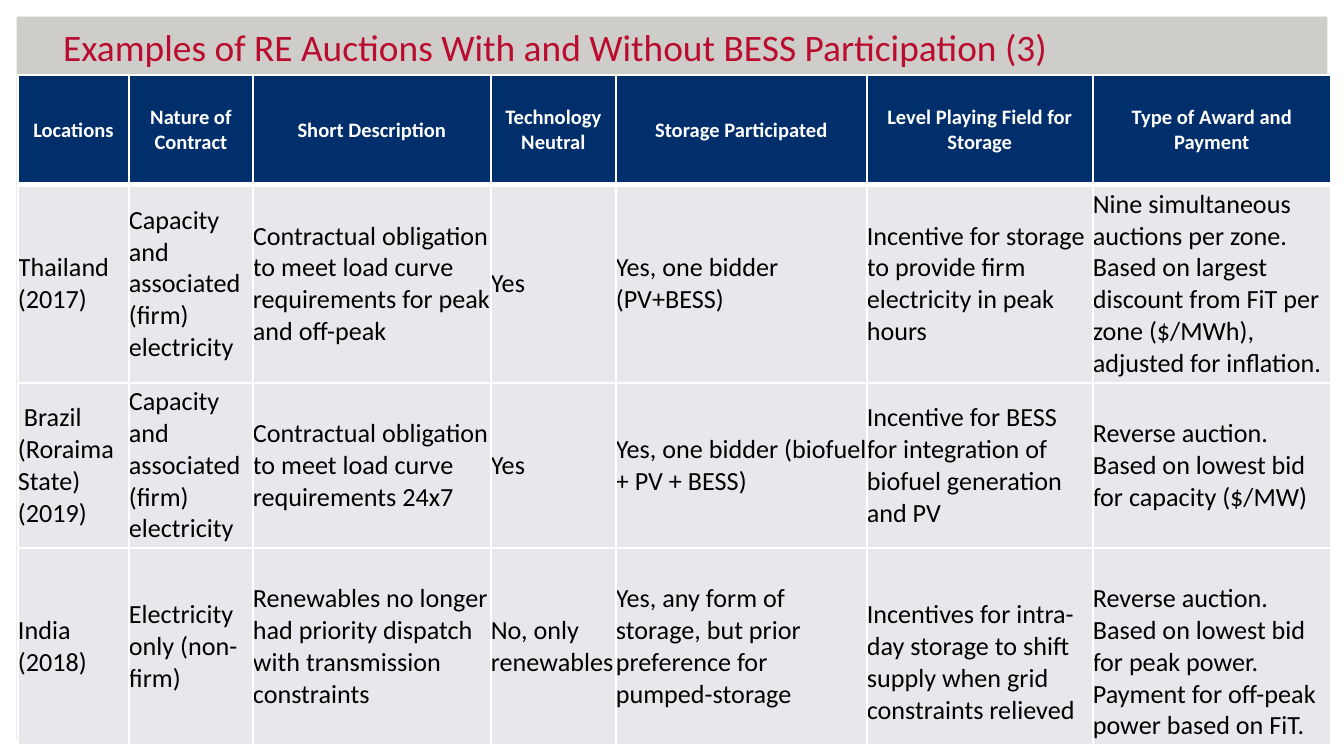
import lxml.etree
import pptx
import pptx.dml.color
import pptx.enum.shapes
import pptx.enum.text
import pptx.oxml.ns
import pptx.util

SCALE = 914400 / 134.4  # EMU in one px
COLORS = {
    "backdrop": "CFCDC9",
    "white": "FFFFFF",
    "title": "BA0C2F",
    "header": "002F6C",
    "body": "E7E8EB",
    "text": "000000",
}
ALIGN = pptx.enum.text.PP_ALIGN
ANCHOR = pptx.enum.text.MSO_ANCHOR


def px(length):
    return pptx.util.Emu(round(length * SCALE))


def write(frame, text, color, align, font_format):
    para = frame.paragraphs[0]
    para.alignment = align
    span = para.add_run()
    span.text = text
    span.font.color.rgb = pptx.dml.color.RGBColor.from_string(COLORS[color])
    for name, value in font_format.items():
        setattr(span.font, name, value)


deck = pptx.Presentation()
deck.slide_width, deck.slide_height = px(1344), px(756)
page = deck.slides.add_slide(deck.slide_layouts[6])

# Backdrop with a white frame
page.background.fill.solid()
page.background.fill.fore_color.rgb = pptx.dml.color.RGBColor.from_string(COLORS["backdrop"])
border = page.shapes.add_shape(
    pptx.enum.shapes.MSO_SHAPE.FRAME, 0, 0, deck.slide_width, deck.slide_height)
border.adjustments[0] = 0.022
border.shadow.inherit = False
border.fill.solid()
border.fill.fore_color.rgb = pptx.dml.color.RGBColor.from_string(COLORS["white"])
border.line.fill.background()

# Table contents
ROWS = [
    ["Locations", "Nature of Contract", "Short Description", "Technology Neutral",
     "Storage Participated", "Level Playing Field for Storage", "Type of Award and Payment"],
    ["Thailand (2017)", "Capacity and associated (firm) electricity",
     "Contractual obligation to meet load curve requirements for peak and off-peak",
     "Yes", "Yes, one bidder (PV+BESS)",
     "Incentive for storage to provide firm electricity in peak hours",
     "Nine simultaneous auctions per zone. Based on largest discount from FiT per zone "
     "($/MWh), adjusted for inflation."],
    [" Brazil (Roraima State) (2019)", "Capacity and associated (firm) electricity",
     "Contractual obligation to meet load curve requirements 24x7",
     "Yes", "Yes, one bidder (biofuel + PV + BESS)",
     "Incentive for BESS for integration of biofuel generation and PV",
     "Reverse auction. Based on lowest bid for capacity ($/MW)"],
    ["India (2018)", "Electricity only (non-firm)",
     "Renewables no longer had priority dispatch with transmission constraints",
     "No, only renewables",
     "Yes, any form of storage, but prior preference for pumped-storage",
     "Incentives for intra-day storage to shift supply when grid constraints relieved",
     "Reverse auction. Based on lowest bid for peak power. Payment for off-peak power "
     "based on FiT."],
]
COLUMN_WIDTHS = [111, 124, 238, 125, 251, 226, 238]
ROW_HEIGHTS = [110, 198, 165, 197]
LOWERED_CELLS = {(3, 5), (3, 6)}  # text sits one line lower
HEADER_FONT = {"name": "Calibri", "size": pptx.util.Pt(11), "bold": True}
BODY_FONT = {"name": "Calibri", "size": pptx.util.Pt(14), "bold": False}

# Table grid
table = page.shapes.add_table(
    len(ROWS), len(COLUMN_WIDTHS), px(18), px(75),
    px(sum(COLUMN_WIDTHS)), px(sum(ROW_HEIGHTS))).table
table.first_row = True
table.horz_banding = False
for column, width in zip(table.columns, COLUMN_WIDTHS):
    column.width = px(width)
for row, height in zip(table.rows, ROW_HEIGHTS):
    row.height = px(height)

# Table cells
for r, texts in enumerate(ROWS):
    for c, text in enumerate(texts):
        cell = table.cell(r, c)
        cell_format = {
            "margin_left": 0,
            "margin_right": 0,
            "margin_top": px(32) if (r, c) in LOWERED_CELLS else 0,
            "margin_bottom": 0,
            "vertical_anchor": ANCHOR.MIDDLE,
        }
        for name, value in cell_format.items():
            setattr(cell, name, value)

        # White borders, thicker below the header
        properties = cell._tc.get_or_add_tcPr()
        for side in "LRTB":
            thick = (r, side) in ((0, "B"), (1, "T"))
            line = lxml.etree.SubElement(
                properties, pptx.oxml.ns.qn(f"a:ln{side}"),
                w=str(pptx.util.Pt(3 if thick else 1)))
            fill = lxml.etree.SubElement(line, pptx.oxml.ns.qn("a:solidFill"))
            lxml.etree.SubElement(fill, pptx.oxml.ns.qn("a:srgbClr"), val=COLORS["white"])

        cell.fill.solid()
        cell.fill.fore_color.rgb = pptx.dml.color.RGBColor.from_string(
            COLORS["body" if r else "header"])
        if r:
            write(cell.text_frame, text, "text", ALIGN.LEFT, BODY_FONT)
        else:
            write(cell.text_frame, text, "white", ALIGN.CENTER, HEADER_FONT)

# Title
title = page.shapes.add_textbox(px(50), px(20), px(1220), px(56)).text_frame
title.word_wrap = True
title.vertical_anchor = ANCHOR.BOTTOM
write(title, "Examples of RE Auctions With and Without BESS Participation (3)",
      "title", ALIGN.LEFT, {"name": "Calibri", "size": pptx.util.Pt(20)})

deck.save("out.pptx")
